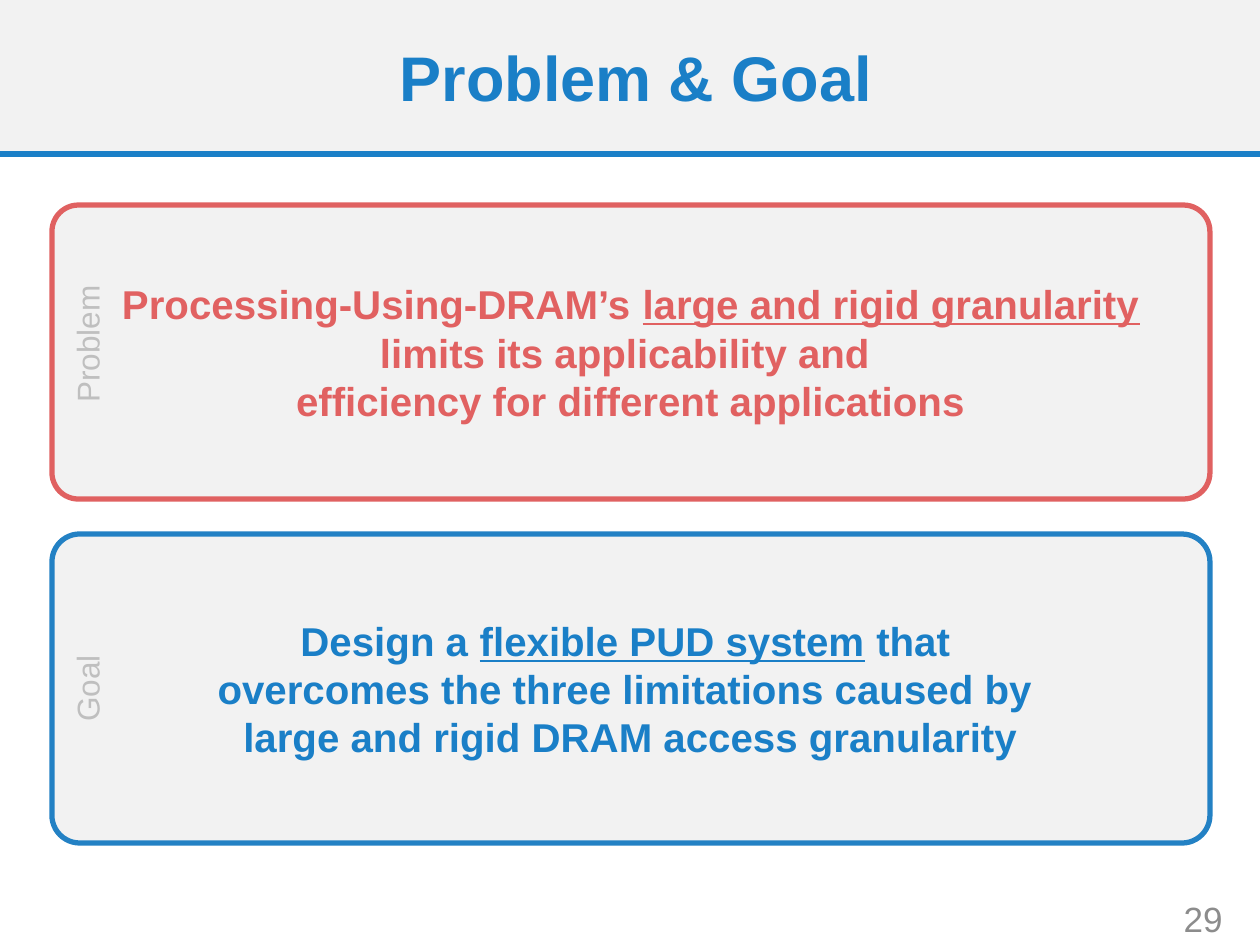
import pptx
import pptx.util
import pptx.dml.color
import pptx.enum.shapes
import pptx.enum.text
import pptx.oxml

RGBColor = pptx.dml.color.RGBColor
BLUE = RGBColor(0x1A, 0x7F, 0xC7)
BORDER_BLUE = RGBColor(0x23, 0x81, 0xC4)
RED = RGBColor(0xE1, 0x61, 0x61)
BORDER_RED = RGBColor(0xE0, 0x61, 0x61)
PANEL_GRAY = RGBColor(0xF2, 0xF2, 0xF2)
LABEL_GRAY = RGBColor(0xBF, 0xBF, 0xBF)
NUMBER_GRAY = RGBColor(0x8C, 0x8C, 0x8C)

Shapes = pptx.enum.shapes.MSO_SHAPE
Align = pptx.enum.text.PP_ALIGN
Anchor = pptx.enum.text.MSO_ANCHOR
EMU_PER_PX = 914400 / 126
LINE_WIDTH = pptx.util.Pt(3)


def px(length):
    return pptx.util.Emu(round(length * EMU_PER_PX))


def write_text(shape, lines, *, size, color, bold=False, align=Align.CENTER,
               anchor=Anchor.MIDDLE, line_spacing=None):
    frame = shape.text_frame
    frame.word_wrap = True
    frame.vertical_anchor = anchor
    paragraph = frame.paragraphs[0]
    paragraph.alignment = align
    paragraph.line_spacing = line_spacing
    for index, line in enumerate(lines):
        if index:
            paragraph.add_line_break()
        for text, underlined in line:
            run = paragraph.add_run()
            run.text = text
            run.font.name = "Arial"
            run.font.size = pptx.util.Pt(size)
            run.font.bold = bold
            run.font.underline = underlined
            run.font.color.rgb = color


def add_text(slide, box, text, **text_format):
    shape = slide.shapes.add_textbox(*map(px, box))
    write_text(shape, [[(text, False)]], **text_format)
    return shape


def add_panel(shapes, kind, box, border=None):
    shape = shapes.add_shape(kind, *map(px, box))
    shape.shadow.inherit = False
    shape.fill.solid()
    shape.fill.fore_color.rgb = PANEL_GRAY
    if border is None:
        shape.line.fill.background()
    else:
        shape.line.color.rgb = border
        shape.line.width = LINE_WIDTH
    return shape


def add_header(slide, box, title):
    left, top, width, height = box
    add_panel(slide.shapes, Shapes.RECTANGLE, box)
    rule_top = px(top + height - 1)
    rule = slide.shapes.add_connector(
        pptx.enum.shapes.MSO_CONNECTOR.STRAIGHT,
        px(left), rule_top, px(left + width), rule_top)
    rule.line.color.rgb = BLUE
    rule.line.width = LINE_WIDTH
    rule._element.spPr.append(pptx.oxml.parse_xml(
        '<a:effectLst xmlns:a="http://schemas.openxmlformats.org/drawingml/2006/main"/>'))
    add_text(slide, (left + 23, top + 19, width - 34, 127), title,
             size=36, color=BLUE, bold=True, line_spacing=0.9)


def add_statement(slide, box, label, lines, *, color, border, label_shift=0):
    left, top, width, height = box
    panel = add_panel(slide.shapes, Shapes.ROUNDED_RECTANGLE, box, border)
    panel.adjustments[0] = 0.09
    write_text(panel, lines, size=23, color=color, bold=True)

    label_length, label_depth = height, 50
    center_x = left + 35
    center_y = top + height / 2 + label_shift
    label_box = (center_x - label_length / 2, center_y - label_depth / 2,
                 label_length, label_depth)
    label_shape = add_text(slide, label_box, label, size=18,
                           color=LABEL_GRAY, anchor=Anchor.TOP)
    label_shape.rotation = 270


def main():
    presentation = pptx.Presentation()
    presentation.slide_width = px(1260)
    presentation.slide_height = px(945)
    slide = presentation.slides.add_slide(presentation.slide_layouts[6])

    add_header(slide, (0, -1, 1260, 156), "Problem & Goal")
    add_statement(
        slide, (52, 205, 1158, 294), "Problem",
        [[("Processing-Using-DRAM’s ", False), ("large and rigid granularity", True)],
         [("limits its applicability and ", False)],
         [("efficiency for different applications", False)]],
        color=RED, border=BORDER_RED, label_shift=-8)
    add_statement(
        slide, (52, 534, 1158, 309), "Goal",
        [[("Design a ", False), ("flexible PUD system", True), (" that ", False)],
         [("overcomes the three limitations caused by ", False)],
         [("large and rigid DRAM access granularity", False)]],
        color=BLUE, border=BORDER_BLUE)
    add_text(slide, (1099, 893, 136, 50), "29", size=20,
             color=NUMBER_GRAY, align=Align.RIGHT)

    presentation.save("out.pptx")


if __name__ == "__main__":
    main()
